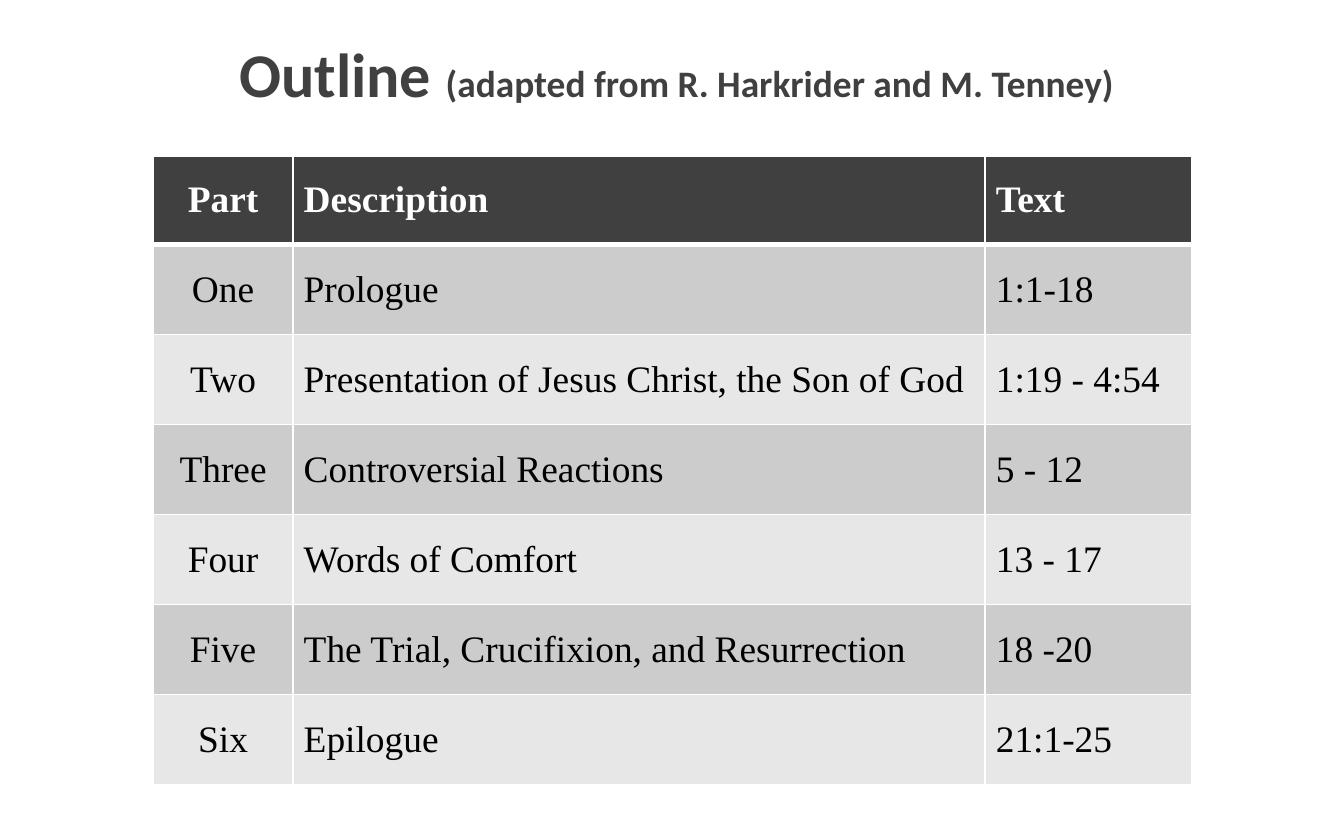
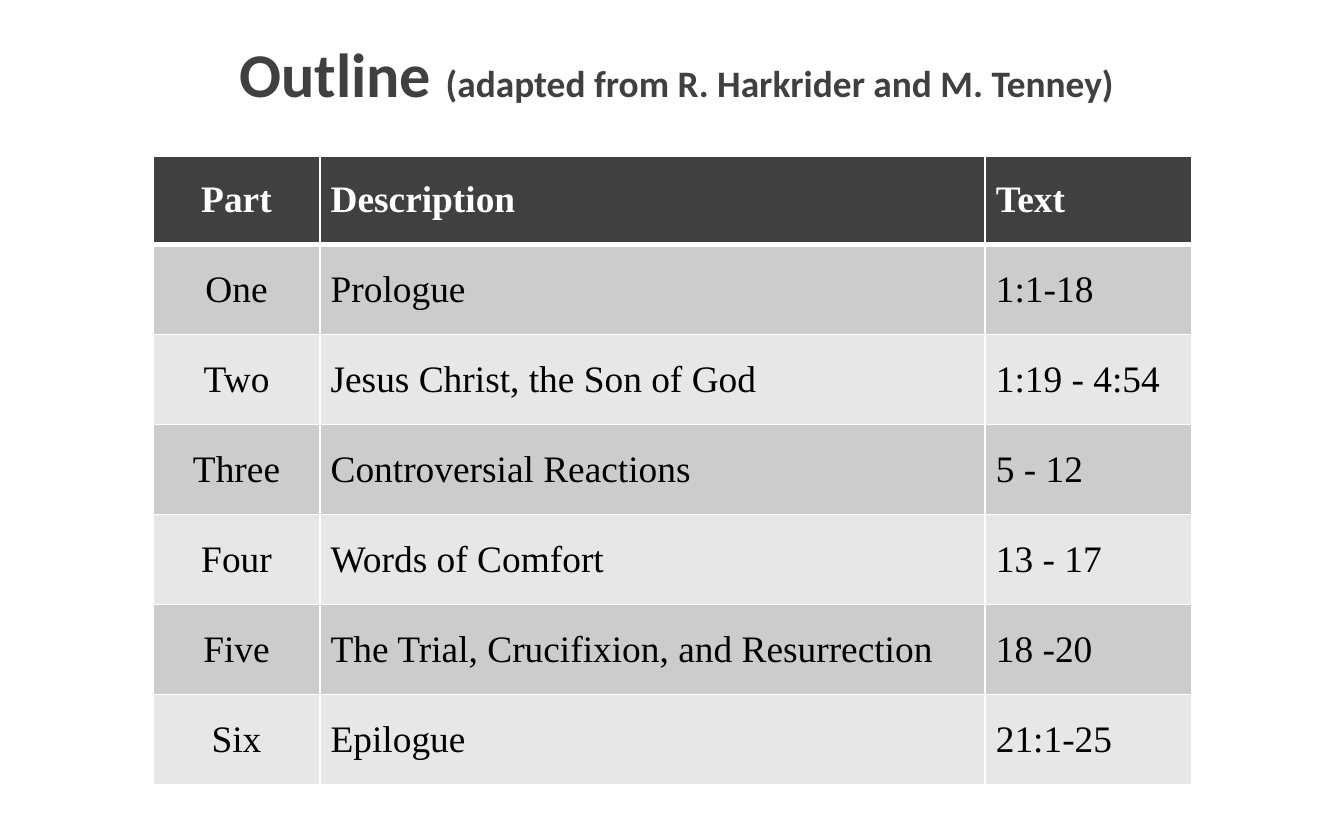
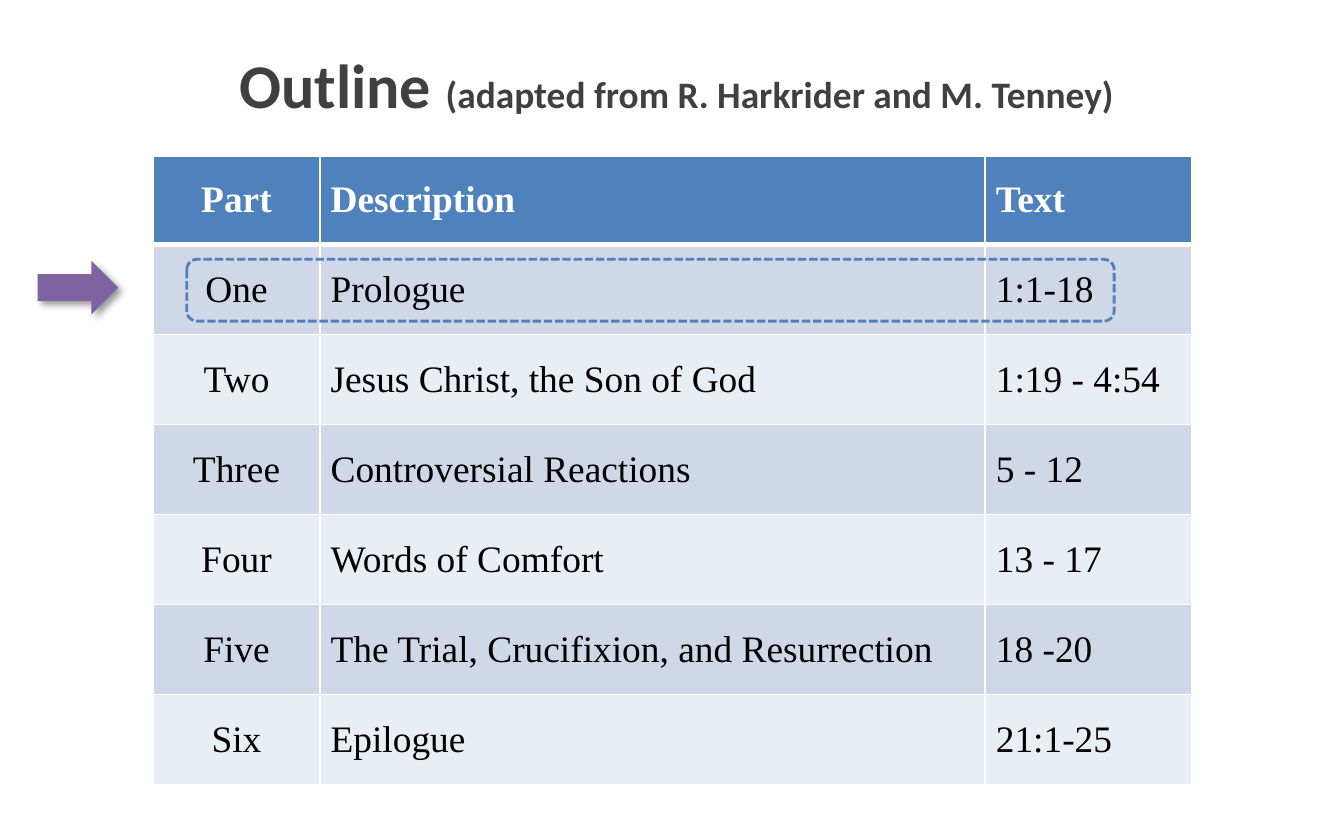
from lxml import etree
from pptx import Presentation
from pptx import util as u
from pptx.dml.color import RGBColor
from pptx.enum import dml, shapes, text
from pptx.oxml import parse_xml
from pptx.oxml.ns import nsdecls, qn

PX = 9144  # EMU per px, 100 px to the inch
COLORS = {
    "ink": "404040", "white": "FFFFFF", "black": "000000",
    "gray_dark": "CCCCCC", "gray_light": "E7E7E7",
    "blue": "4F81BD", "blue_dark": "D0D8E8", "blue_light": "E9EDF4",
    "purple": "8064A2",
}
GRAY = ("ink", "gray_dark", "gray_light")
BLUE = ("blue", "blue_dark", "blue_light")
HEADER_H, ROW_H = 66, 67

TITLE = {"name": "Calibri", "size": u.Pt(33.3), "bold": True}
SUBTITLE = {**TITLE, "size": u.Pt(20)}
BODY = {"name": "Times New Roman", "size": u.Pt(20), "bold": False}
HEAD = {**BODY, "bold": True}
CELL = {
    "margin_left": 8 * PX, "margin_right": 8 * PX,
    "margin_top": 4 * PX, "margin_bottom": 4 * PX,
    "vertical_anchor": text.MSO_ANCHOR.MIDDLE,
}


def rgb(name):
    return RGBColor.from_string(COLORS[name])


def apply(target, values):
    for key, value in values.items():
        setattr(target, key, value)


class Deck:
    def __init__(self, width, height):
        self.prs = Presentation()
        self.prs.slide_width, self.prs.slide_height = width * PX, height * PX
        self.s = None

    def slide(self):
        self.s = self.prs.slides.add_slide(self.prs.slide_layouts[6])

    def run(self, p, words, font, color):
        r = p.add_run()
        r.text = words
        apply(r.font, font)
        r.font.color.rgb = rgb(color)

    def title(self, top):
        sp = self.s.shapes.add_textbox(24 * PX, top * PX, 959 * PX, 56 * PX)
        tf = sp.text_frame
        apply(tf, {"word_wrap": True, "vertical_anchor": text.MSO_ANCHOR.MIDDLE})
        p = tf.paragraphs[0]
        p.alignment = text.PP_ALIGN.CENTER
        self.run(p, "Outline ", TITLE, "ink")
        self.run(p, "(adapted from R. Harkrider and M. Tenney)", SUBTITLE, "ink")

    def borders(self, cell, top, bottom):
        tc_pr = cell._tc.get_or_add_tcPr()
        for side, width in (("L", 1), ("R", 1), ("T", top), ("B", bottom)):
            ln = etree.SubElement(tc_pr, qn(f"a:ln{side}"), w=str(u.Pt(width)))
            fill = etree.SubElement(ln, qn("a:solidFill"))
            etree.SubElement(fill, qn("a:srgbClr"), val=COLORS["white"])

    def table(self, rows, widths, theme):
        height = HEADER_H + ROW_H * (len(rows) - 1)
        table = self.s.shapes.add_table(
            len(rows), len(widths), 114 * PX, 116 * PX,
            sum(widths) * PX, height * PX).table
        for column, width in zip(table.columns, widths):
            column.width = width * PX
        head, dark, light = theme
        for i, row in enumerate(rows):
            table.rows[i].height = (ROW_H if i else HEADER_H) * PX
            fill = head if i == 0 else dark if i % 2 else light
            for j, words in enumerate(row):
                cell = table.cell(i, j)
                apply(cell, CELL)
                self.borders(cell, 3 if i == 1 else 1, 1 if i else 3)
                cell.fill.solid()
                cell.fill.fore_color.rgb = rgb(fill)
                p = cell.text_frame.paragraphs[0]
                p.alignment = text.PP_ALIGN.LEFT if j else text.PP_ALIGN.CENTER
                self.run(p, words, *((BODY, "black") if i else (HEAD, "white")))

    def shape(self, kind, left, top, width, height):
        sp = self.s.shapes.add_shape(
            kind, left * PX, top * PX, width * PX, height * PX)
        sp.shadow.inherit = False
        return sp

    def arrow(self, *box):
        sp = self.shape(shapes.MSO_SHAPE.RIGHT_ARROW, *box)
        sp.fill.solid()
        sp.fill.fore_color.rgb = rgb("purple")
        sp.line.fill.background()
        effects = sp._element.spPr.find(qn("a:effectLst"))
        effects.append(parse_xml(
            f'<a:outerShdw {nsdecls("a")} blurRad="{u.Pt(4)}" dist="{u.Pt(3)}" '
            f'dir="2700000" algn="tl" rotWithShape="0">'
            f'<a:srgbClr val="{COLORS["black"]}"><a:alpha val="40000"/></a:srgbClr>'
            f'</a:outerShdw>'))

    def highlight(self, *box):
        sp = self.shape(shapes.MSO_SHAPE.ROUNDED_RECTANGLE, *box)
        sp.fill.background()
        sp.line.color.rgb = rgb("blue")
        apply(sp.line, {"width": u.Pt(1.5),
                        "dash_style": dml.MSO_LINE.SQUARE_DOT})


def outline(part_two):
    return [
        ("Part", "Description", "Text"),
        ("One", "Prologue", "1:1-18"),
        ("Two", part_two, "1:19 - 4:54"),
        ("Three", "Controversial Reactions", "5 - 12"),
        ("Four", "Words of Comfort", "13 - 17"),
        ("Five", "The Trial, Crucifixion, and Resurrection", "18 -20"),
        ("Six", "Epilogue", "21:1-25"),
    ]


def main():
    deck = Deck(1000, 625)
    short = "Jesus Christ, the Son of God"

    # Title top, second part, column widths and table colours of each slide
    for top, part_two, widths, theme in (
        (26, "Presentation of " + short, (104, 515, 154), GRAY),
        (26, short, (124, 495, 154), GRAY),
        (34, short, (124, 495, 154), BLUE),
    ):
        deck.slide()
        deck.title(top)
        deck.table(outline(part_two), widths, theme)

    # Pointer to part one on the last slide
    deck.arrow(28, 194, 60, 40)
    deck.highlight(139, 193, 690, 46)

    deck.prs.save("out.pptx")


if __name__ == "__main__":
    main()
